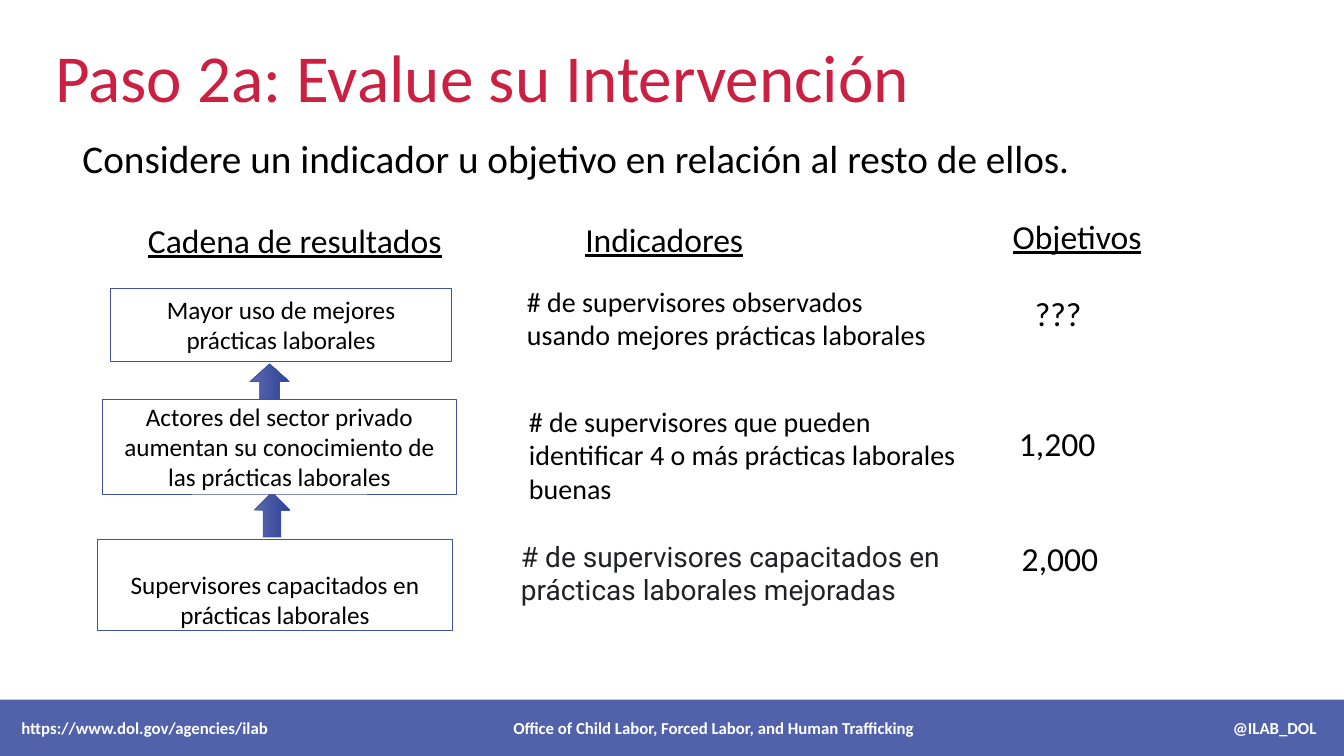
from lxml import etree
from pptx import Presentation
from pptx import util as u
from pptx.dml.color import RGBColor
from pptx.enum import shapes, text
from pptx.oxml import ns

CRIMSON = RGBColor(0xCB, 0x20, 0x42)
BLACK = RGBColor(0, 0, 0)
CHARCOAL = RGBColor(0x20, 0x21, 0x24)
WHITE = RGBColor(0xFF, 0xFF, 0xFF)
INDIGO = RGBColor(0x3F, 0x51, 0xA2)
ARROW_LIGHT = RGBColor(0x5D, 0x68, 0xAE)
ARROW_DARK = RGBColor(0x2F, 0x42, 0x99)

HEADINGS = [
    ("Cadena de resultados", (3.48, 5.41, 8.1, 1.27)),
    ("Indicadores", (14.5, 5.38, 4.6, 1.27)),
    ("Objetivos", (25.27, 5.31, 3.9, 1.27)),
]
STAGES = [
    ("Supervisores capacitados en prácticas laborales", (2.46, 13.59, 8.94, 2.29),
     {"margin_top": u.Cm(0.76), "margin_bottom": 0}, (6.41, 12.41, 0.89, 1.12)),
    ("Actores del sector privado aumentan su conocimiento de las prácticas laborales",
     (2.57, 10.06, 8.94, 2.39), {}, (6.3, 9.17, 0.99, 0.89)),
    ("Mayor uso de mejores prácticas laborales", (2.79, 7.26, 8.59, 1.85), {}, None),
]
INDICATORS = [
    ("# de supervisores capacitados en prácticas laborales mejoradas",
     (12.88, 13.46, 11.86, 1.96), {"name": "Roboto", "color": CHARCOAL}),
    ("# de supervisores que pueden identificar 4 o más prácticas laborales buenas",
     (13.08, 10.06, 11.68, 2.82), {}),
    ("# de supervisores observados usando mejores prácticas laborales",
     (13.03, 7.04, 10.64, 1.96), {}),
]
TARGETS = [
    ("2,000", (25.5, 13.44, 4.67, 1.27)),
    ("1,200", (25.43, 10.52, 4.75, 1.27)),
    ("???", (25.83, 7.26, 2.46, 1.27)),
]
FOOTER = ["https://www.dol.gov/agencies/ilab",
          "Office of Child Labor, Forced Labor, and Human Trafficking", "@ILAB_DOL"]
FOOTER_TABS = [("ctr", 17.45), ("r", 32.64)]


class ResultsPage:
    """Draws the elements of the results chain page in one style."""

    def __init__(self, deck):
        self.page = deck.slides.add_slide(deck.slide_layouts[6])
        self.font = {"name": "Calibri", "color": BLACK}

    def add_words(self, box, words, size, frame=None, para_format=None, **font):
        values = {"word_wrap": True, **(frame or {})}
        for key, value in values.items():
            setattr(box.text_frame, key, value)
        para = box.text_frame.paragraphs[0]
        for key, value in (para_format or {}).items():
            setattr(para, key, value)
        span = para.add_run()
        span.text = words
        style = {**self.font, "size": u.Pt(size), **font}
        span.font.color.rgb = style.pop("color")
        for key, value in style.items():
            setattr(span.font, key, value)
        return para

    def label(self, words, place, size, **formats):
        box = self.page.shapes.add_textbox(*map(u.Cm, place))
        self.add_words(box, words, size, **formats)

    def shape(self, kind, place):
        box = self.page.shapes.add_shape(kind, *map(u.Cm, place))
        box.shadow.inherit = False
        box.line.color.rgb = INDIGO
        box.line.width = u.Pt(0.5)
        return box

    def stage(self, words, place, margins):
        box = self.shape(shapes.MSO_SHAPE.RECTANGLE, place)
        box.fill.solid()
        box.fill.fore_color.rgb = WHITE
        self.add_words(box, words, 18,
                       frame={"vertical_anchor": text.MSO_ANCHOR.MIDDLE, **margins},
                       para_format={"alignment": text.PP_ALIGN.CENTER})

    def arrow(self, place):
        box = self.shape(shapes.MSO_SHAPE.UP_ARROW, place)
        box.fill.gradient()
        box.fill.gradient_angle = 0
        for stop, color in zip(box.fill.gradient_stops, (ARROW_LIGHT, ARROW_DARK)):
            stop.color.rgb = color

    def footer(self, parts, tabs, place):
        bar = self.shape(shapes.MSO_SHAPE.RECTANGLE, place)
        bar.line.fill.background()
        bar.fill.solid()
        bar.fill.fore_color.rgb = INDIGO
        color = bar.fill._xPr.find(".//" + ns.qn("a:srgbClr"))
        etree.SubElement(color, ns.qn("a:alpha"), val="90000")
        para = self.add_words(bar, "\t".join(parts), 12, bold=True, color=WHITE,
                              frame={"vertical_anchor": text.MSO_ANCHOR.MIDDLE,
                                     "margin_left": u.Cm(0.54)},
                              para_format={"alignment": text.PP_ALIGN.LEFT})
        tab_list = etree.SubElement(para._p.get_or_add_pPr(), ns.qn("a:tabLst"))
        for align, stop in tabs:
            etree.SubElement(tab_list, ns.qn("a:tab"), pos=str(int(u.Cm(stop))), algn=align)


def main():
    deck = Presentation()
    deck.slide_width, deck.slide_height = u.Cm(33.87), u.Cm(19.05)
    page = ResultsPage(deck)
    page.label("Paso 2a: Evalue su Intervención", (1.14, 0.41, 28.55, 2.67), 48, color=CRIMSON,
               frame={"vertical_anchor": text.MSO_ANCHOR.BOTTOM},
               para_format={"line_spacing": 0.9})
    page.label("Considere un indicador u objetivo en relación al resto de ellos.",
               (1.83, 3.4, 30.68, 1.75), 28, para_format={"line_spacing": 0.9})
    for words, place in HEADINGS:
        page.label(words, place, 24, underline=True)
    for words, place, margins, arrow in STAGES:
        if arrow:
            page.arrow(arrow)
        page.stage(words, place, margins)
    for words, place, font in INDICATORS:
        page.label(words, place, 20, **font)
    for words, place in TARGETS:
        page.label(words, place, 24)
    page.footer(FOOTER, FOOTER_TABS, (0, 17.63, 33.87, 1.42))
    deck.save("out.pptx")


if __name__ == "__main__":
    main()
